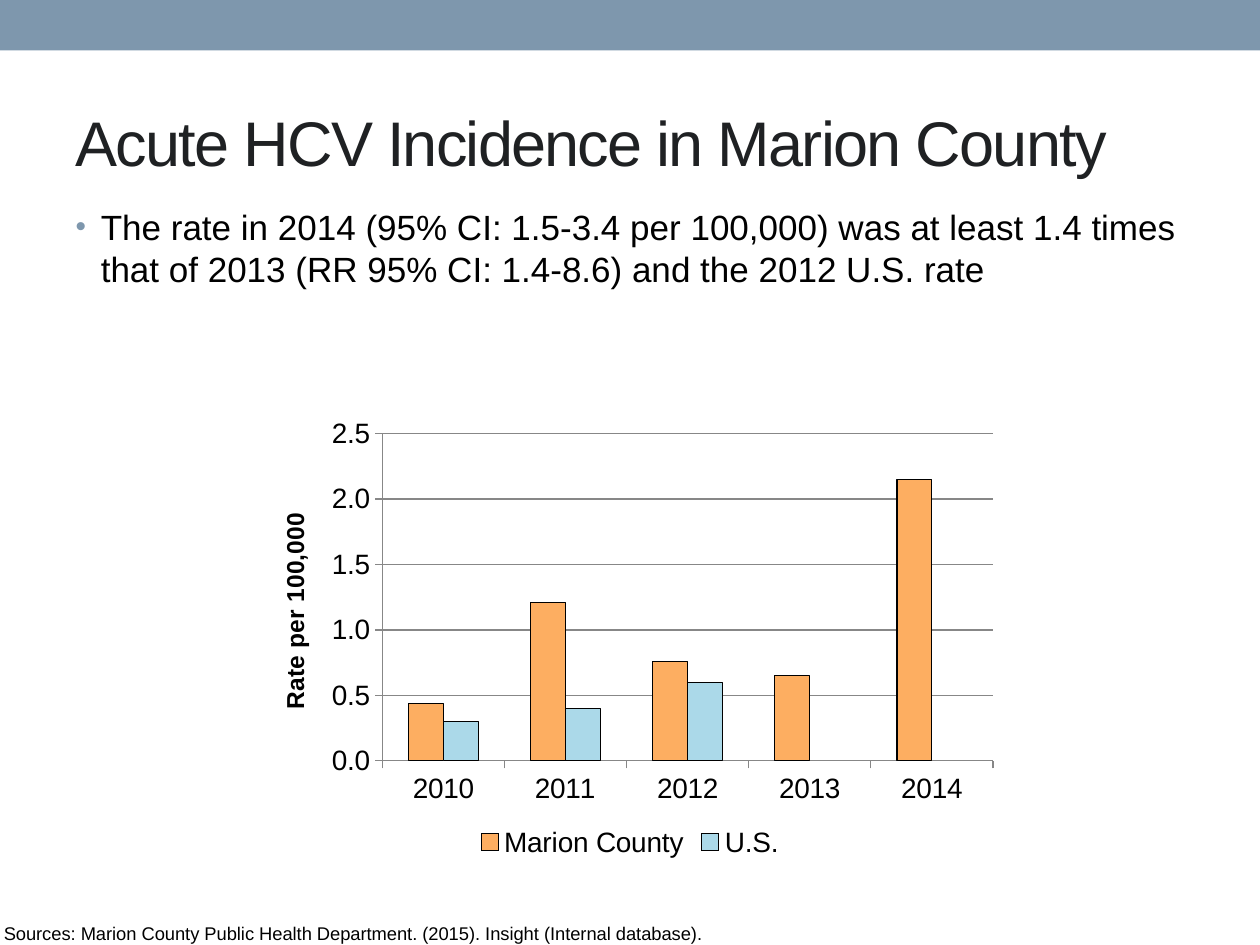
from pptx import Presentation
from pptx.chart.data import CategoryChartData
from pptx.dml.color import RGBColor
from pptx.enum import chart as charts, shapes, text
from pptx.oxml import parse_xml
from pptx.oxml.ns import nsdecls, qn
from pptx.util import Inches, Pt

SLATE = RGBColor(0x7E, 0x97, 0xAD)
INK = RGBColor(0x1F, 0x21, 0x23)
BLACK = RGBColor(0, 0, 0)
GRAY = RGBColor(0x87, 0x87, 0x87)
ORANGE = RGBColor(0xFD, 0xAE, 0x61)
LIGHT_BLUE = RGBColor(0xAB, 0xD9, 0xE9)


def place(box, left, top, width, height):
    bounds = {"left": left, "top": top, "width": width, "height": height}
    for name, value in bounds.items():
        setattr(box, name, Inches(value))


def write(box, words, size, color, **frame_format):
    frame = box.text_frame
    frame.word_wrap = True
    frame.auto_size = text.MSO_AUTO_SIZE.NONE
    for name, value in frame_format.items():
        setattr(frame, name, value)
    para = frame.paragraphs[0]
    para.alignment = text.PP_ALIGN.LEFT
    span = para.add_run()
    span.text = words
    for name, value in {"name": "Arial", "size": Pt(size)}.items():
        setattr(span.font, name, value)
    span.font.color.rgb = color
    return para, span


deck = Presentation()
deck.slide_width, deck.slide_height = Inches(10), Inches(7.5)
page = deck.slides.add_slide(deck.slide_layouts[1])

# Top band
band = page.shapes.add_shape(
    shapes.MSO_SHAPE.RECTANGLE, 0, 0, deck.slide_width, Inches(0.4))
band.shadow.inherit = False
band.fill.solid()
band.fill.fore_color.rgb = SLATE
band.line.fill.background()

# Title
title = page.shapes.title
place(title, 0.5, 0.58, 9.08, 1.08)
para, span = write(title, "Acute HCV Incidence in Marion County", 36, INK,
                   vertical_anchor=text.MSO_ANCHOR.MIDDLE)
span.font._element.set("spc", "-100")

# Bulleted finding
body = page.placeholders[1]
place(body, 0.5, 1.58, 9, 1.33)
para, span = write(
    body,
    "The rate in 2014 (95% CI: 1.5-3.4 per 100,000) was at least 1.4 times "
    "that of 2013 (RR 95% CI: 1.4-8.6) and the 2012 U.S. rate", 20, BLACK)
para.space_before, para.space_after = Pt(4), Pt(6)
bullet = para._p.get_or_add_pPr()
bullet.set("marL", str(Inches(0.2)))
bullet.set("indent", str(Inches(-0.2)))
for markup in (f'<a:buClr {nsdecls("a")}><a:srgbClr val="{SLATE}"/></a:buClr>',
               f'<a:buSzPct {nsdecls("a")} val="85000"/>',
               f'<a:buFont {nsdecls("a")} typeface="Arial"/>',
               f'<a:buChar {nsdecls("a")} char="•"/>'):
    bullet.append(parse_xml(markup))

# Incidence chart
rates = CategoryChartData(number_format="#,##0.0")
rates.categories = ["2010", "2011", "2012", "2013", "2014"]
rates.add_series("Marion County", [0.44, 1.21, 0.76, 0.65, 2.15])
rates.add_series("U.S.", [0.3, 0.4, 0.6, None, None])
chart = page.shapes.add_chart(
    charts.XL_CHART_TYPE.COLUMN_CLUSTERED, Inches(2), Inches(3.25),
    Inches(6), Inches(3.6), rates).chart
chart.has_title = False
chart.font.name, chart.font.size = "Arial", Pt(16)
chart.font.color.rgb = BLACK
chart.has_legend = True
chart.legend.position = charts.XL_LEGEND_POSITION.BOTTOM
chart.legend.include_in_layout = False

plot = chart.plots[0]
plot.vary_by_categories = False
plot.gap_width, plot.overlap = 150, 0
for series, color in zip(plot.series, (ORANGE, LIGHT_BLUE)):
    series.format.fill.solid()
    series.format.fill.fore_color.rgb = color
    series.format.line.color.rgb = BLACK
    series.format.line.width = Pt(0.75)

# Axes
rate_axis = chart.value_axis
for name, value in {"minimum_scale": 0, "maximum_scale": 2.5,
                    "major_unit": 0.5, "has_major_gridlines": True}.items():
    setattr(rate_axis, name, value)
rate_axis.tick_labels.number_format = "#,##0.0"
rate_axis.tick_labels.number_format_is_linked = False
for axis in (chart.category_axis, rate_axis):
    axis.major_tick_mark = charts.XL_TICK_MARK.OUTSIDE
    axis.minor_tick_mark = charts.XL_TICK_MARK.NONE
for part in (chart.category_axis, rate_axis, rate_axis.major_gridlines):
    part.format.line.color.rgb = GRAY
    part.format.line.width = Pt(0.75)

heading = rate_axis.axis_title.text_frame
heading.text = "Rate per 100,000"
label = heading.paragraphs[0].runs[0].font
for name, value in {"name": "Arial", "size": Pt(14), "bold": True}.items():
    setattr(label, name, value)
label.color.rgb = BLACK
turn = rate_axis.axis_title._element.find(".//" + qn("a:bodyPr"))
turn.set("rot", "-5400000")
turn.set("vert", "horz")

# Source note
note = page.shapes.add_textbox(
    Inches(0.03), Inches(7.32), Inches(9.89), Inches(0.18))
write(note, "Sources: Marion County Public Health Department. (2015). "
      "Insight (Internal database).", 10.5, BLACK,
      margin_left=0, margin_right=0, margin_top=0, margin_bottom=0,
      auto_size=text.MSO_AUTO_SIZE.SHAPE_TO_FIT_TEXT)

deck.save("out.pptx")
